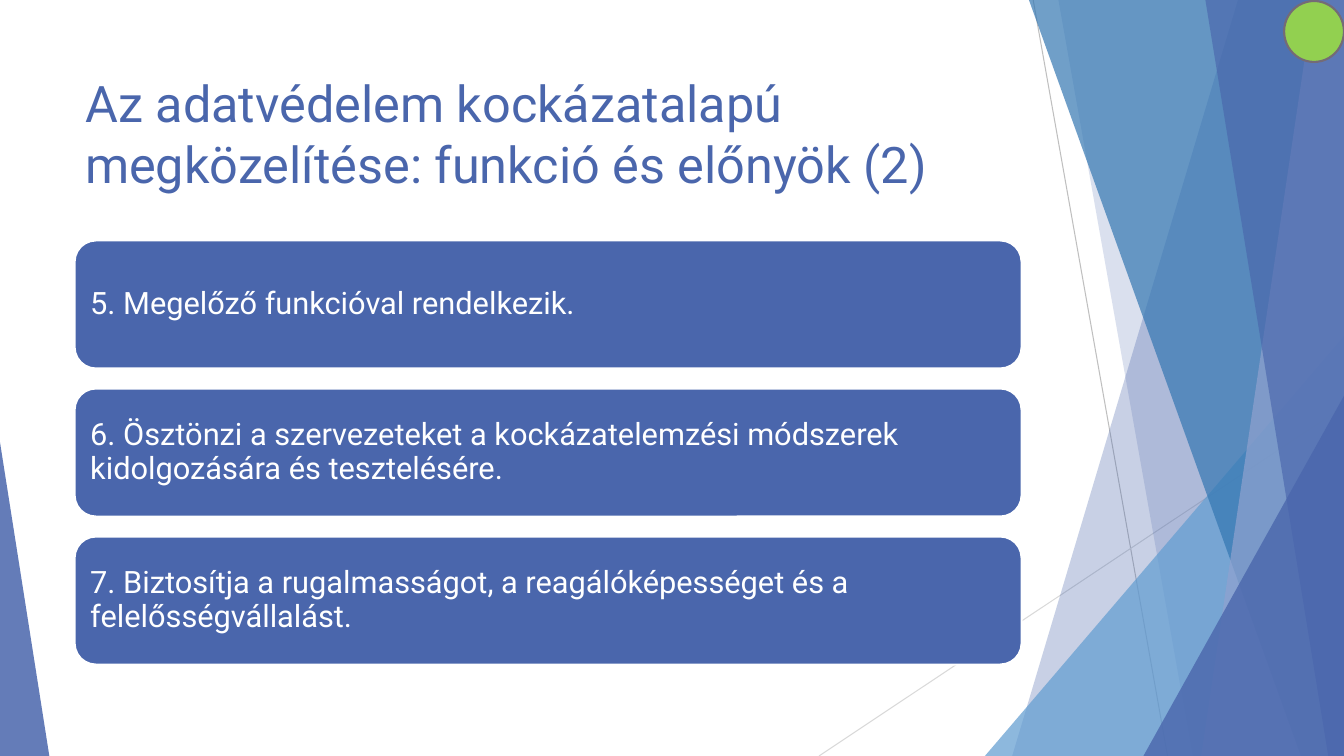
from dataclasses import dataclass

from lxml.etree import SubElement
from pptx import Presentation
from pptx.dml.color import RGBColor
from pptx.enum.shapes import MSO_CONNECTOR as Connector, MSO_SHAPE as Shape
from pptx.enum.text import MSO_ANCHOR as Anchor, MSO_AUTO_SIZE as AutoSize, PP_ALIGN as Align
from pptx.oxml.ns import qn
from pptx.util import Pt

PX = 9525  # EMU in one px, 96 px to the inch
WIDTH, HEIGHT = 1280, 720


@dataclass(frozen=True)
class Theme:
    font: str = "Roboto"
    title_size: int = 36
    card_size: int = 22
    blue: str = "4A66AC"
    sky: str = "629DD1"
    deep: str = "3477B2"
    pale: str = "90A2CF"
    white: str = "FFFFFF"
    green: str = "92D050"
    ring: str = "746B76"


THEME = Theme()


def write_text(shape, text, *, size, color, anchor, inset, spacing=1.0):
    frame = shape.text_frame
    frame.word_wrap = True
    frame.auto_size = AutoSize.NONE
    frame.vertical_anchor = anchor
    frame.margin_left = frame.margin_right = inset * PX
    frame.margin_top = frame.margin_bottom = 5 * PX
    paragraph = frame.paragraphs[0]
    paragraph.text = text
    paragraph.alignment = Align.LEFT
    paragraph.line_spacing = spacing
    paragraph.space_before = Pt(0)
    font = paragraph.runs[0].font
    font.name, font.size = THEME.font, Pt(size)
    font.color.rgb = RGBColor.from_string(color)


def paint(shape, fill, *, opacity=100, line=None):
    shape.shadow.inherit = False
    shape.fill.solid()
    shape.fill.fore_color.rgb = RGBColor.from_string(fill)
    if opacity < 100:
        color = shape.fill._xPr.find(qn("a:solidFill"))[0]
        SubElement(color, qn("a:alpha"), val=str(opacity * 1000))
    if line:
        shape.line.color.rgb = RGBColor.from_string(line)
        shape.line.width = Pt(1.5)
    else:
        shape.line.fill.background()


presentation = Presentation()
presentation.slide_width, presentation.slide_height = WIDTH * PX, HEIGHT * PX
slide = presentation.slides.add_slide(presentation.slide_layouts[5])
shapes = slide.shapes

# Thin background lines
for x1, y1, x2, y2, color in [(984, 0, 1112, HEIGHT, "BFBFBF"),
                              (WIDTH, 387, 780, HEIGHT, "D9D9D9")]:
    line = shapes.add_connector(Connector.STRAIGHT, x1 * PX, y1 * PX, x2 * PX, y2 * PX)
    line.line.color.rgb = RGBColor.from_string(color)
    line.line.width = Pt(0.75)
    SubElement(line._element.spPr, qn("a:effectLst"))

# Facets: bands reach the right edge, triangles stand on the bottom edge
facets = [
    ("band", 1179, 964, THEME.blue, 30),
    ("band", 1008, 1136, THEME.blue, 20),
    ("triangle", 938, 320, THEME.sky, 72),
    ("band", 980, 1239, THEME.deep, 70),
    ("band", 1251, 1144, THEME.pale, 70),
    ("band", 1148, 1265, THEME.blue, 65),
    ("triangle", 1089, 377, THEME.blue, 80),
    ("triangle", 0, 421, THEME.blue, 85),
]
for kind, first, second, color, opacity in facets:
    if kind == "band":
        top_x, bottom_x = first, second
        builder = shapes.build_freeform(top_x, 0, scale=PX)
        builder.add_line_segments([(WIDTH, 0), (WIDTH, HEIGHT), (bottom_x, HEIGHT)])
        facet = builder.convert_to_shape()
    else:
        left, top = first, second
        width = WIDTH - left if left else 47
        facet = shapes.add_shape(Shape.ISOSCELES_TRIANGLE, left * PX, top * PX,
                                 width * PX, (HEIGHT - top) * PX)
        facet.adjustments[0] = 1 if left else 0
    paint(facet, color, opacity=opacity)

# Title
title = shapes.title
title.left, title.top, title.width, title.height = 71 * PX, 64 * PX, 902 * PX, 138 * PX
write_text(title, "Az adatvédelem kockázatalapú megközelítése: funkció és előnyök (2)",
           size=THEME.title_size, color=THEME.blue, anchor=Anchor.TOP, inset=10)

# Cards
cards = [
    "5. Megelőző funkcióval rendelkezik.",
    "6. Ösztönzi a szervezeteket a kockázatelemzési módszerek kidolgozására és tesztelésére.",
    "7. Biztosítja a rugalmasságot, a reagálóképességet és a felelősségvállalást.",
]
CARD_TOP, CARD_STEP = 229, 141
for index, text in enumerate(cards):
    card = shapes.add_shape(Shape.ROUNDED_RECTANGLE, 71 * PX, (CARD_TOP + index * CARD_STEP) * PX,
                            902 * PX, 122 * PX)
    paint(card, THEME.blue, line=THEME.white)
    write_text(card, text, size=THEME.card_size, color=THEME.white,
               anchor=Anchor.MIDDLE, inset=9, spacing=0.9)

# Status dot
dot = shapes.add_shape(Shape.OVAL, 1223 * PX, 1 * PX, 57 * PX, 58 * PX)
paint(dot, THEME.green, line=THEME.ring)

presentation.save("out.pptx")
